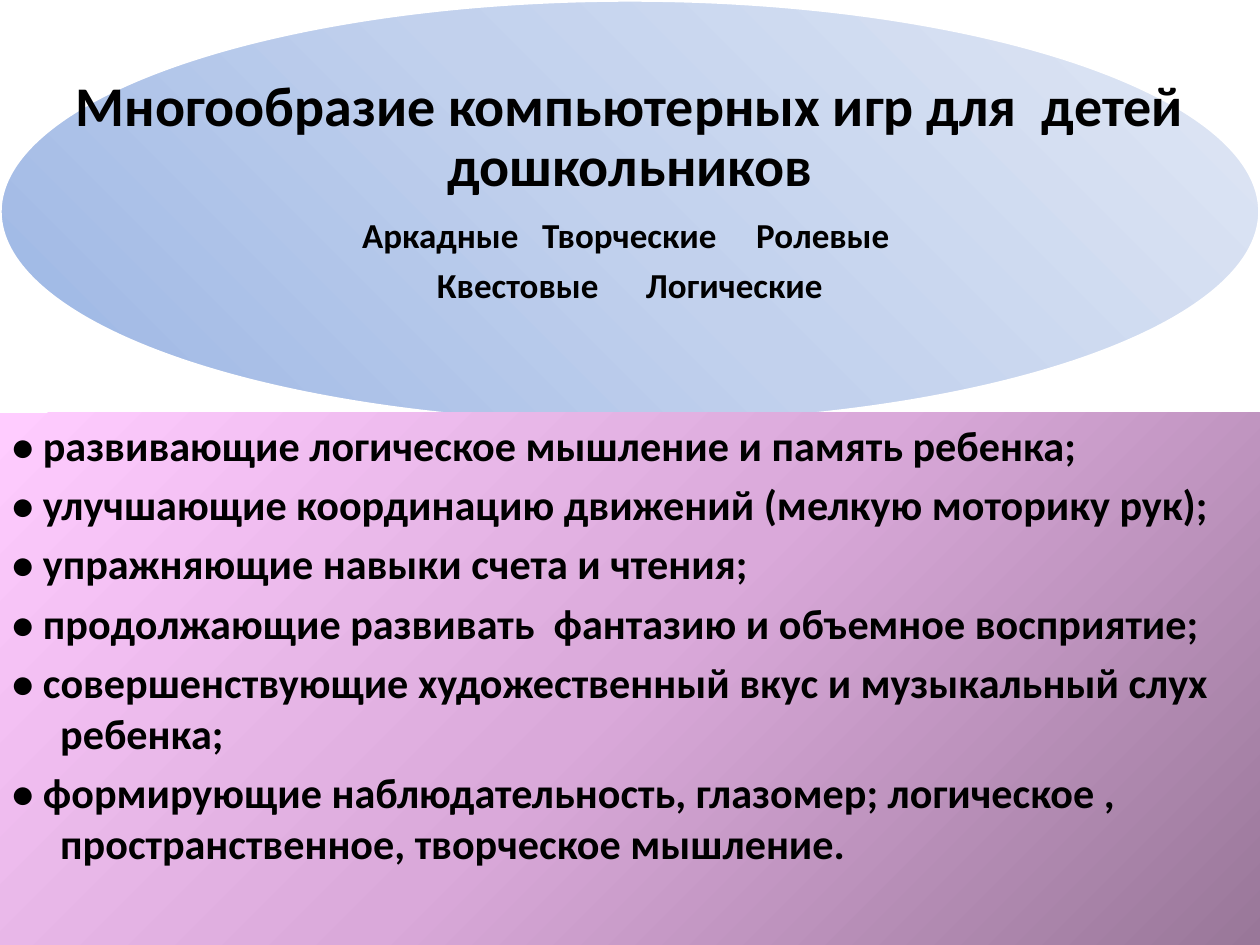
from pptx import Presentation
from pptx.dml.color import RGBColor
from pptx.enum.shapes import MSO_SHAPE
from pptx.enum.text import MSO_ANCHOR, MSO_AUTO_SIZE, PP_ALIGN
from pptx.oxml import parse_xml
from pptx.oxml.ns import nsdecls
from pptx.util import Inches, Pt

WIDE, HIGH = Inches(10), Inches(7.5)
OVAL = (0, 0, 1, 0.448)
PANEL = (0, 0.437, 1, 0.563)
HEADS = [
    ("Многообразие компьютерных игр для  детей дошкольников", 32),
    ("Аркадные   Творческие     Ролевые ", 20),
    ("Квестовые      Логические", 20),
]
GOALS = [
    "развивающие логическое мышление и память ребенка;",
    "улучшающие координацию движений (мелкую моторику рук);",
    "упражняющие навыки счета и чтения;",
    "продолжающие развивать  фантазию и объемное восприятие;",
    "совершенствующие художественный вкус и музыкальный слух ребенка;",
    "формирующие наблюдательность, глазомер; логическое , пространственное, творческое мышление.",
]


def color(code):
    return RGBColor.from_string(code)


def place(area):
    x, y, w, h = area
    return int(x * WIDE), int(y * HIGH), int(w * WIDE), int(h * HIGH)


def add_glow(slide, kind, area, tones, focus):
    shape = slide.shapes.add_shape(kind, *place(area))
    shape.shadow.inherit = False
    stops = "".join(
        f'<a:gs pos="{i * 50000}"><a:srgbClr val="{tone}"/></a:gs>'
        for i, tone in enumerate(tones)
    )
    sides = " ".join(f'{side}="{share * 1000}"' for side, share in zip("ltrb", focus))
    fill = parse_xml(
        f'<a:gradFill {nsdecls("a")} rotWithShape="1"><a:gsLst>{stops}</a:gsLst>'
        f'<a:path path="circle"><a:fillToRect {sides}/></a:path></a:gradFill>'
    )
    shape._element.spPr.insert(2, fill)
    shape.line.fill.background()
    return shape


def set_frame(shape, anchor, insets):
    frame = shape.text_frame
    frame.word_wrap = True
    frame.auto_size = MSO_AUTO_SIZE.NONE
    frame.vertical_anchor = anchor
    left, top, right, base = map(Inches, insets)
    frame.margin_left, frame.margin_right = left, right
    frame.margin_top, frame.margin_bottom = top, base
    return frame


def add_line(frame, index, text, size, align):
    line = frame.add_paragraph() if index else frame.paragraphs[0]
    line.alignment = align
    run = line.add_run()
    run.text = text
    run.font.name = "Calibri"
    run.font.size = Pt(size)
    run.font.bold = True
    run.font.color.rgb = color("000000")
    return line


def add_title(slide):
    title = slide.shapes.title
    slide.shapes._spTree.append(title._element)
    title.left, title.top, title.width, title.height = place(OVAL)
    frame = set_frame(title, MSO_ANCHOR.MIDDLE, (0.12, 0.04, 0.12, 0.35))
    for i, (text, size) in enumerate(HEADS):
        line = add_line(frame, i, text, size, PP_ALIGN.CENTER)
        line.line_spacing = 0.9
        line.space_before = Pt(0)
        line.space_after = Pt(0.35 * size)


def add_goals(panel):
    frame = set_frame(panel, MSO_ANCHOR.TOP, (0.1, 0.05, 0.1, 0.05))
    for i, goal in enumerate(GOALS):
        line = add_line(frame, i, "• " + goal, 24.1, PP_ALIGN.LEFT)
        line.space_before = Pt(5 if i else 0)
        form = line._p.get_or_add_pPr()
        form.set("marL", str(Inches(0.38)))
        form.set("indent", str(Inches(-0.38)))


def main():
    deck = Presentation()
    deck.slide_width, deck.slide_height = WIDE, HIGH
    slide = deck.slides.add_slide(deck.slide_layouts[5])
    oval = add_glow(slide, MSO_SHAPE.OVAL, OVAL,
                    ("9AB5E4", "C2D1ED", "E1E8F5"), (0, 100, 100, 0))
    oval.line.color.rgb = color("FFFFFF")
    oval.line.width = Pt(2)
    add_title(slide)
    panel = add_glow(slide, MSO_SHAPE.RECTANGLE, PANEL,
                     ("997799", "DAA9DA", "FFCCFF"), (100, 100, 0, 0))
    add_goals(panel)
    deck.save("out.pptx")


if __name__ == "__main__":
    main()
